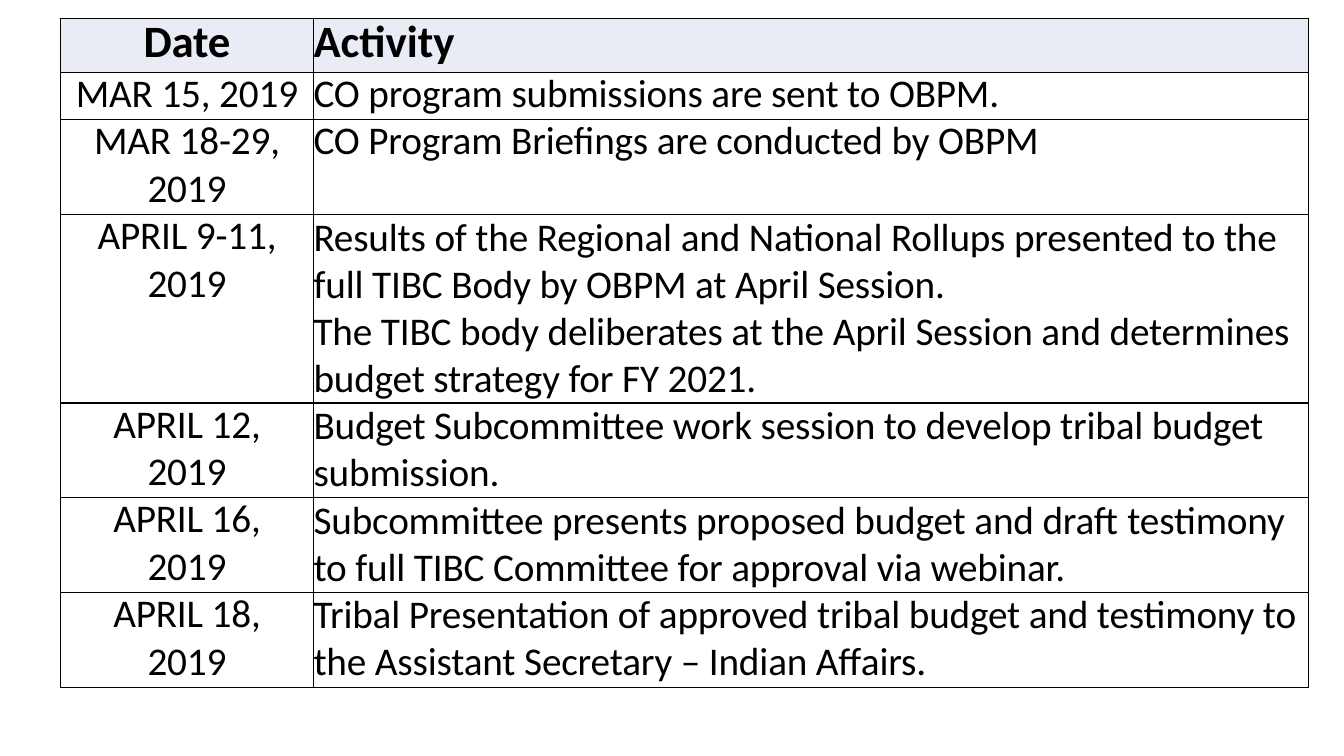
from dataclasses import dataclass

from lxml.etree import SubElement
from pptx import Presentation
from pptx.dml.color import RGBColor
from pptx.enum.text import PP_ALIGN as Align
from pptx.oxml.ns import qn
from pptx.table import _Cell as Cell
from pptx.util import Inches, Pt

BLACK = RGBColor(0x00, 0x00, 0x00)
HEADER_FILL = RGBColor(0xE9, 0xEB, 0xF5)
FONT = "Calibri"
BORDER_SIDES = ("a:lnL", "a:lnR", "a:lnT", "a:lnB")
COLUMN_WIDTHS = (2.51, 9.87)
TABLE_LEFT, TABLE_TOP = 0.6, 0.18


@dataclass(frozen=True)
class TextStyle:
    size: float
    line_height: float
    align: Align
    bold: bool = False
    tracking: int = -10


@dataclass(frozen=True)
class Event:
    date: str
    activity: str
    height: float
    activity_line: float = 33.6


HEADER_DATE = TextStyle(32, 36.7, Align.CENTER, True, -20)
HEADER_ACTIVITY = TextStyle(32, 36.7, Align.LEFT, True, 0)
DATE = TextStyle(28, 32.5, Align.CENTER)

EVENTS = (
    Event("MAR 15, 2019", "CO program submissions are sent to OBPM.", 0.47, 32.5),
    Event("MAR 18-29,\n2019", "CO Program Briefings are conducted by OBPM", 0.94, 32.5),
    Event(
        "APRIL 9-11,\n2019",
        "Results of the Regional and National Rollups presented to the "
        "full TIBC Body by OBPM at April Session.\n"
        "The TIBC body deliberates at the April Session and determines "
        "budget strategy for FY 2021.",
        1.87,
    ),
    Event(
        "APRIL 12,\n2019",
        "Budget Subcommittee work session to develop tribal budget submission.",
        0.94,
    ),
    Event(
        "APRIL 16,\n2019",
        "Subcommittee presents proposed budget and draft testimony "
        "to full TIBC Committee for approval via webinar.",
        0.94,
    ),
    Event(
        "APRIL 18,\n2019",
        "Tribal Presentation of approved tribal budget and testimony to "
        "the Assistant Secretary – Indian Affairs.",
        0.94,
    ),
)


def add_borders(cell: Cell) -> None:
    properties = cell._tc.get_or_add_tcPr()
    for position, side in enumerate(BORDER_SIDES):
        line = SubElement(properties, qn(side), w=str(Pt(1)))
        fill = SubElement(line, qn("a:solidFill"))
        SubElement(fill, qn("a:srgbClr"), val=str(BLACK))
        properties.insert(position, line)


def fill_cell(cell: Cell, text: str, style: TextStyle) -> None:
    cell.margin_left = cell.margin_right = cell.margin_top = cell.margin_bottom = 0
    cell.text_frame.text = text
    for index, para in enumerate(cell.text_frame.paragraphs):
        para.alignment = style.align
        if index == 0 or style.align == Align.LEFT:
            para.line_spacing = Pt(style.line_height)
        for span in para.runs:
            span.font.name = FONT
            span.font.size = Pt(style.size)
            span.font.bold = style.bold
            span.font.color.rgb = BLACK
            span.font._element.set("spc", str(style.tracking))
    if style.bold:
        cell.fill.solid()
        cell.fill.fore_color.rgb = HEADER_FILL
    else:
        cell.fill.background()
    add_borders(cell)


def main() -> None:
    deck = Presentation()
    deck.slide_width, deck.slide_height = Inches(13.33), Inches(7.5)
    page = deck.slides.add_slide(deck.slide_layouts[6])

    heights = (0.54, *(event.height for event in EVENTS))
    schedule = page.shapes.add_table(
        len(heights), len(COLUMN_WIDTHS), Inches(TABLE_LEFT), Inches(TABLE_TOP),
        Inches(sum(COLUMN_WIDTHS)), Inches(sum(heights)),
    ).table
    for column, width in zip(schedule.columns, COLUMN_WIDTHS):
        column.width = Inches(width)
    for row, height in zip(schedule.rows, heights):
        row.height = Inches(height)

    fill_cell(schedule.cell(0, 0), "Date", HEADER_DATE)
    fill_cell(schedule.cell(0, 1), "Activity", HEADER_ACTIVITY)
    for number, event in enumerate(EVENTS, start=1):
        activity_style = TextStyle(28, event.activity_line, Align.LEFT)
        fill_cell(schedule.cell(number, 0), event.date, DATE)
        fill_cell(schedule.cell(number, 1), event.activity, activity_style)

    deck.save("out.pptx")


if __name__ == "__main__":
    main()
